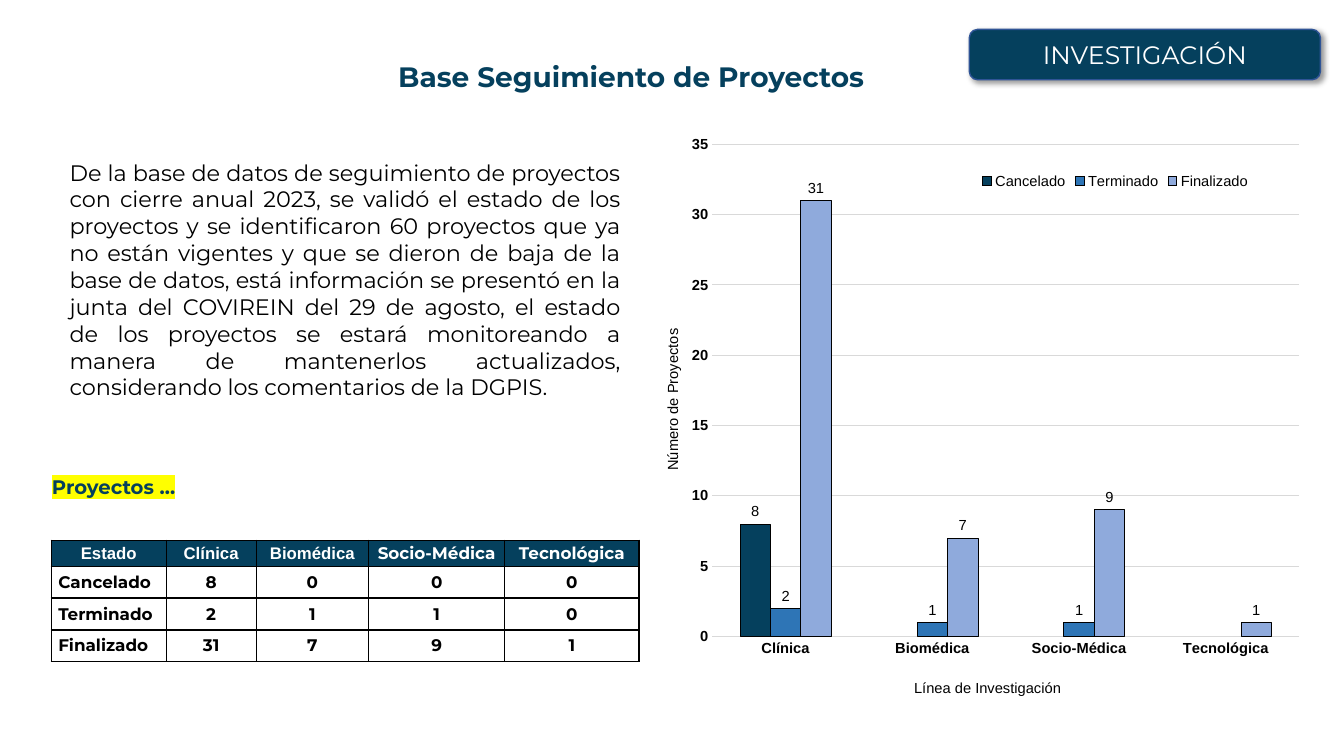
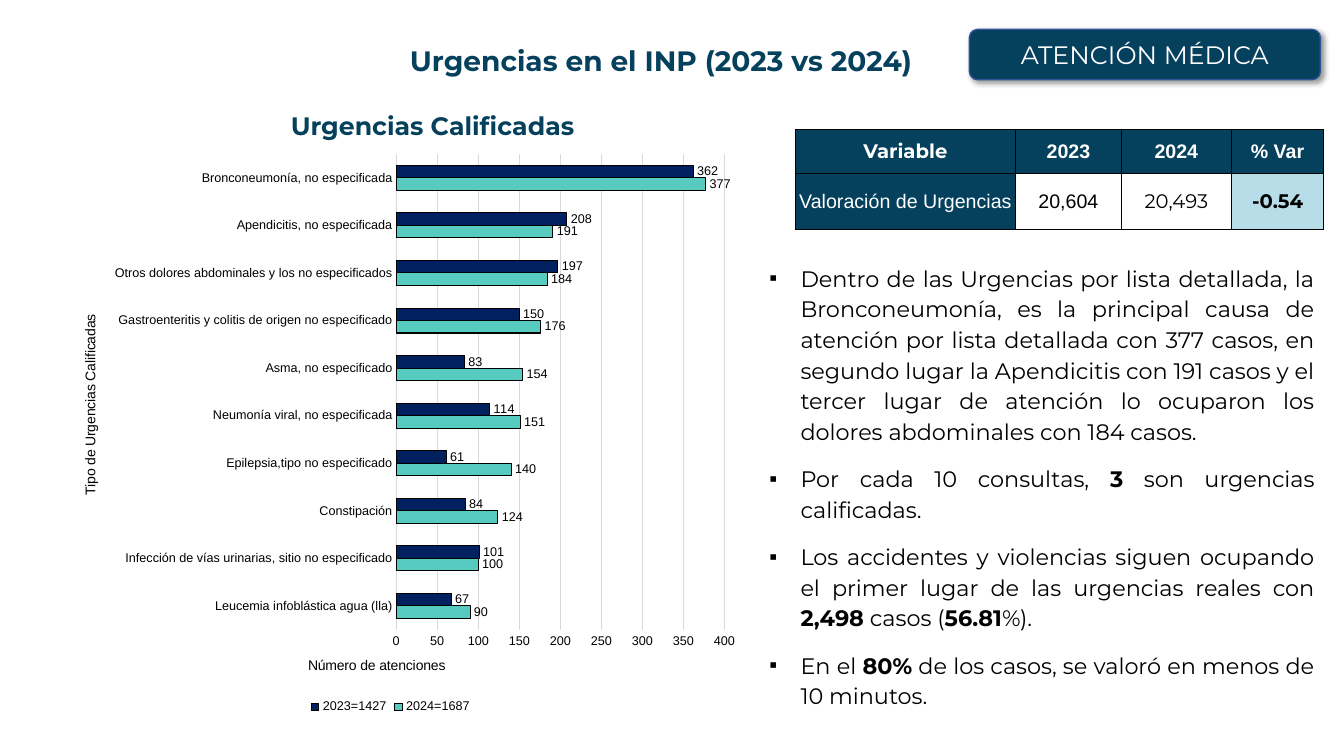
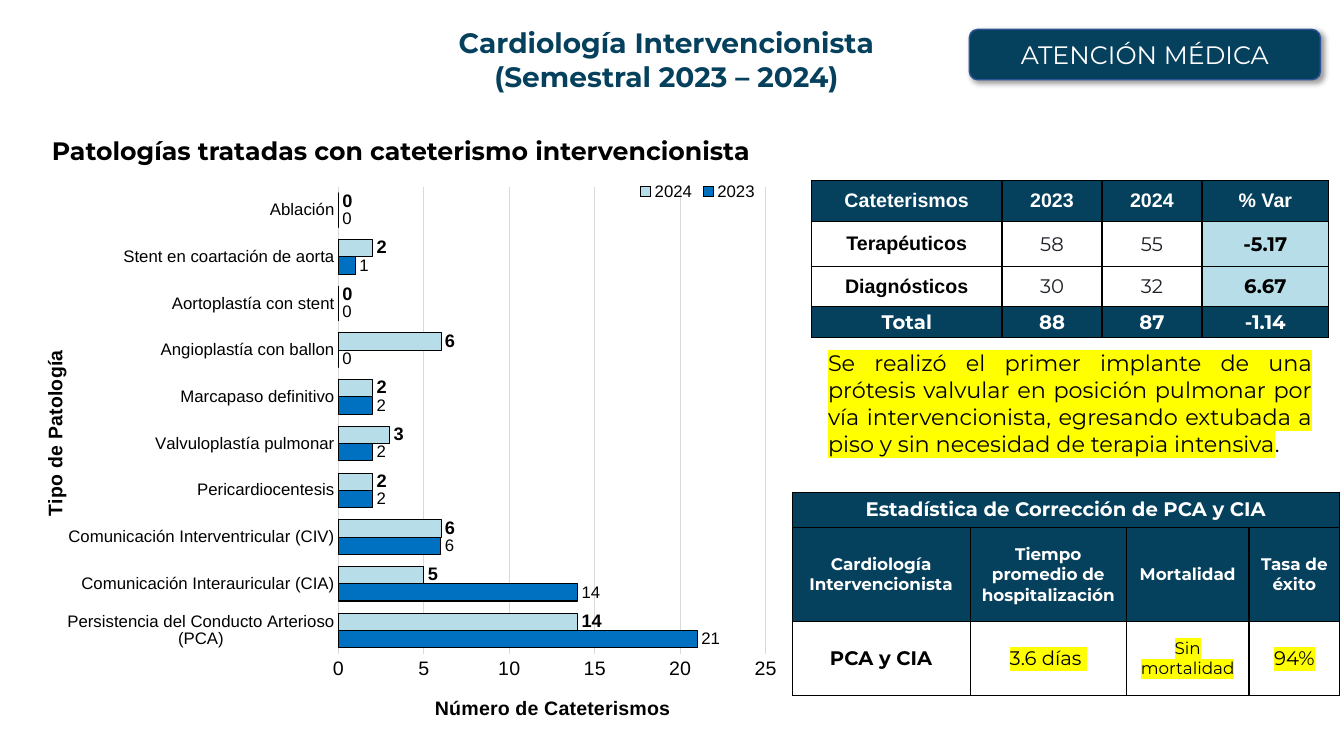
from lxml import etree
from pptx import Presentation
from pptx.chart.data import CategoryChartData
from pptx.dml.color import RGBColor
from pptx.enum.chart import XL_CHART_TYPE, XL_LABEL_POSITION, XL_LEGEND_POSITION, XL_TICK_MARK
from pptx.enum.shapes import MSO_SHAPE
from pptx.enum.text import MSO_ANCHOR, PP_ALIGN
from pptx.oxml.ns import qn
from pptx.util import Inches, Pt

COLUMNS = XL_CHART_TYPE.COLUMN_CLUSTERED
BARS = XL_CHART_TYPE.BAR_CLUSTERED
OUTSIDE = XL_LABEL_POSITION.OUTSIDE_END
BOTTOM = XL_LEGEND_POSITION.BOTTOM
NO_TICK = XL_TICK_MARK.NONE
ROUNDED = MSO_SHAPE.ROUNDED_RECTANGLE
LEFT, CENTER, JUSTIFY = PP_ALIGN.LEFT, PP_ALIGN.CENTER, PP_ALIGN.JUSTIFY
MIDDLE = MSO_ANCHOR.MIDDLE

NAVY, BLACK, WHITE, INK = "05405D", "000000", "FFFFFF", "1D2228"
PALE, YELLOW, GRID_LINE = "B7DEE8", "FFFF00", "D9D9D9"
SANS, BRAND = "Arial", "Montserrat"


def rgb(value):
    return RGBColor.from_string(value)


def grid(cells):
    return Inches(cells / 12)


def sub(parent, tag, **attrs):
    return etree.SubElement(parent, qn(tag), {k: str(v) for k, v in attrs.items()})


def set_font(font, size, color=BLACK, bold=False, name=SANS):
    font.size, font.bold, font.name = Pt(size), bold, name
    font.color.rgb = rgb(color)


def set_layout(parent, index, x, y, w=None, h=None):
    old = parent.find(qn("c:layout"))
    if old is not None:
        parent.remove(old)
    layout = etree.Element(qn("c:layout"))
    manual = sub(layout, "c:manualLayout")
    if w:
        sub(manual, "c:layoutTarget", val="inner")
    sub(manual, "c:xMode", val="edge")
    sub(manual, "c:yMode", val="edge")
    for tag, share in zip("xywh", (x, y, w, h)):
        if share is not None:
            sub(manual, "c:" + tag, val=share)
    parent.insert(index, layout)


class Deck:
    def __init__(self):
        self.prs = Presentation()
        self.prs.slide_width, self.prs.slide_height = grid(160), grid(90)

    def slide(self, section, title, at):
        self.s = self.prs.slides.add_slide(self.prs.slide_layouts[6])
        self.badge(section)
        self.text(at, title, size=20, color=NAVY, bold=True, align=CENTER)

    def badge(self, section):
        sp = self.s.shapes.add_shape(ROUNDED, *map(grid, (115.4, 3.5, 41.8, 6)))
        sp.fill.solid()
        sp.fill.fore_color.rgb = rgb(NAVY)
        sp.line.color.rgb = rgb("2F5496")
        sp.line.width = Pt(1)
        sp.shadow.inherit = False
        effects = sp._element.spPr.find(qn("a:effectLst"))
        shadow = sub(effects, "a:outerShdw", blurRad=Pt(4), dist=Pt(3), dir=45 * 60000,
                     algn="tl", rotWithShape=0)
        sub(sub(shadow, "a:srgbClr", val=BLACK), "a:alpha", val=40000)
        sp.text_frame.vertical_anchor = MIDDLE
        self.paragraphs(sp.text_frame, [section], size=18, color=WHITE, align=CENTER)

    def paragraphs(self, tf, lines, size=16, color=BLACK, bold=False, name=BRAND, align=LEFT,
                   spacing=None, bullet=None, before=0, highlight=None):
        for i, line in enumerate(lines):
            p = tf.paragraphs[0] if i == 0 else tf.add_paragraph()
            p.alignment = align
            if spacing:
                p.line_spacing = spacing
            if before and i:
                p.space_before = Pt(before)
            if bullet:
                pPr = p._p.get_or_add_pPr()
                pPr.set("marL", str(Inches(0.31)))
                pPr.set("indent", str(-Inches(0.31)))
                sub(sub(pPr, "a:buClr"), "a:srgbClr", val=color)
                sub(pPr, "a:buFont", typeface=SANS)
                sub(pPr, "a:buChar", char=bullet)
            set_font(p.font, size, color, bold, name)
            for j, part in enumerate(line.split("*")):
                if part:
                    r = p.add_run()
                    r.text = part
                    if j % 2 and highlight:
                        mark = sub(r._r.get_or_add_rPr(), "a:highlight")
                        sub(mark, "a:srgbClr", val=highlight)
                    elif j % 2:
                        r.font.bold = True

    def text(self, at, lines, **style):
        tf = self.s.shapes.add_textbox(*map(grid, at)).text_frame
        tf.word_wrap = True
        self.paragraphs(tf, lines, **style)

    def table(self, at, cols, rows, content):
        frame = self.s.shapes.add_table(len(rows), len(cols), *map(grid, (*at, sum(cols), sum(rows))))
        tb = frame.table
        tb.first_row = tb.horz_banding = False
        for col, width in zip(tb.columns, cols):
            col.width = grid(width)
        for i, (height, (texts, styles)) in enumerate(zip(rows, content)):
            tb.rows[i].height = grid(height)
            for j in range(len(cols)):
                text = texts[j] if j < len(texts) else ""
                self.cell(tb.cell(i, j), text, **styles[min(j, len(styles) - 1)])
            if len(texts) < len(cols):
                tb.cell(i, len(texts) - 1).merge(tb.cell(i, len(cols) - 1))

    def cell(self, cell, text, fill=WHITE, pad=(0.01, 0), align=CENTER, **style):
        tcPr = cell._tc.get_or_add_tcPr()
        for side in "LRTB":
            border = sub(tcPr, "a:ln" + side, w=Pt(1))
            sub(sub(border, "a:solidFill"), "a:srgbClr", val=BLACK)
        cell.fill.solid()
        cell.fill.fore_color.rgb = rgb(fill)
        cell.margin_left = cell.margin_right = Inches(pad[0])
        cell.margin_top = cell.margin_bottom = Inches(pad[1])
        cell.vertical_anchor = MIDDLE
        self.paragraphs(cell.text_frame, [text], align=align, **style)

    def chart(self, at, kind, cats, series, plot, gap, size, cat, val, top, step,
              legend_size, legend_at=None):
        data = CategoryChartData()
        data.categories = cats
        for name, values, *_ in series:
            data.add_series(name, values)
        chart = self.s.shapes.add_chart(kind, *map(grid, at), data).chart
        set_font(chart.font, size)
        chart.has_title = False
        chart.has_legend = True
        chart.legend.position = BOTTOM
        chart.legend.include_in_layout = False
        set_font(chart.legend.font, legend_size)
        if legend_at:
            set_layout(chart.legend._element, 1, *legend_at)
        set_layout(chart._chartSpace.chart.plotArea, 0, *plot)
        bars = chart.plots[0]
        bars.gap_width, bars.overlap, bars.vary_by_categories = gap, 0, False
        for ser, (_, _, color, line, font) in zip(bars.series, series):
            ser.format.fill.solid()
            ser.format.fill.fore_color.rgb = rgb(color)
            ser.format.line.color.rgb = rgb(BLACK)
            ser.format.line.width = Pt(line)
            labels = ser.data_labels
            labels.show_value = True
            labels.position = OUTSIDE
            set_font(labels.font, **font)
        self.axis(chart.category_axis, upright=kind == BARS, **cat)
        self.axis(chart.value_axis, upright=kind == COLUMNS, **val)
        chart.category_axis.has_major_gridlines = False
        self.hairline(chart.category_axis.format.line)
        value = chart.value_axis
        value.minimum_scale, value.maximum_scale, value.major_unit = 0, top, step
        value.format.line.fill.background()
        self.hairline(value.major_gridlines.format.line)

    def hairline(self, line):
        line.color.rgb = rgb(GRID_LINE)
        line.width = Pt(0.75)

    def axis(self, axis, upright, title, at, font, title_font):
        axis.major_tick_mark = axis.minor_tick_mark = NO_TICK
        set_font(axis.tick_labels.font, **font)
        tf = axis.axis_title.text_frame
        tf.text = title
        set_font(tf.paragraphs[0].font, **title_font)
        if upright:
            body = tf._txBody.find(qn("a:bodyPr"))
            body.set("rot", "-5400000")
            body.set("vert", "horz")
        set_layout(axis.axis_title._element, 1, *at)


def projects(deck):
    deck.slide("INVESTIGACIÓN", ["Base Seguimiento de Proyectos"], (45.4, 6.5, 59.5, 5.3))
    deck.text((7.1, 18.3, 68, 36.7), [
        "De la base de datos de seguimiento de proyectos con cierre anual 2023, se validó el estado "
        "de los proyectos y se identificaron 60 proyectos que ya no están vigentes y que se dieron "
        "de baja de la base de datos, está información se presentó en la junta del COVIREIN del 29 "
        "de agosto, el estado de los proyectos se estará monitoreando a manera de mantenerlos "
        "actualizados, considerando los comentarios de la DGPIS."], align=JUSTIFY)
    deck.text((5, 55.9, 59.5, 4.1), ["*Proyectos …*"], size=14, color=NAVY, bold=True,
              highlight=YELLOW)
    cats = ["Clínica", "Biomédica", "Socio-Médica", "Tecnológica"]
    counts = {"Cancelado": [8, 0, 0, 0], "Terminado": [2, 1, 1, 0], "Finalizado": [31, 7, 9, 1]}
    base = dict(size=12, bold=True, pad=(0.07, 0))
    head = dict(base, fill=NAVY, color=WHITE, spacing=1.07)
    arial = dict(head, name=SANS)
    deck.table((6.1, 64.3), (13.7, 10.7, 13.4, 16.2, 16), (3.1, 3.8, 3.8, 3.8),
               [(["Estado", *cats], [arial, arial, arial, head])]
               + [([name, *map(str, row)], [dict(base, align=LEFT), dict(base, pad=(0.01, 0))])
                  for name, row in counts.items()])
    plain = dict(size=10.5)
    strong = dict(size=10.5, bold=True)
    deck.chart((76.2, 16.1, 78.8, 67.4), COLUMNS, cats,
               [(name, [n or None for n in row], color, 0.5, plain)
                for (name, row), color in zip(counts.items(), (NAVY, "2E75B6", "8FAADC"))],
               (0.109, 0.016, 0.887, 0.874), 182, 10.5,
               dict(title="Línea de Investigación", at=(0.41, 0.96), font=strong, title_font=plain),
               dict(title="Número de Proyectos", at=(0.03, 0.34), font=strong, title_font=plain),
               35, 5, 10.5, (0.51, 0.06))


def emergencies(deck):
    deck.slide("ATENCIÓN MÉDICA", ["Urgencias en el INP (2023 vs 2024)"], (41.9, 4.6, 73.6, 5.8))
    small, label = dict(size=9), dict(size=10)
    deck.chart((4.3, 15.4, 84.4, 70.1), BARS,
               ["Leucemia infoblástica agua (lla)",
                "Infección de vías urinarias, sitio no especificado", "Constipación",
                "Epilepsia,tipo no especificado", "Neumonía viral, no especificada",
                "Asma, no especificado", "Gastroenteritis y colitis de origen no especificado",
                "Otros dolores abdominales y los no especificados", "Apendicitis, no especificada",
                "Bronconeumonía, no especificada"],
               [("2024=1687", [90, 100, 124, 140, 151, 154, 176, 184, 191, 377], "58CBC0", 0.75, small),
                ("2023=1427", [67, 101, 84, 61, 114, 83, 150, 197, 208, 362], "002060", 0.75, small)],
               (0.508, 0.042, 0.463, 0.808), 182, 10,
               dict(title="Tipo de Urgencias Calificadas", at=(0.06, 0.31), font=small, title_font=label),
               dict(title="Número de atenciones", at=(0.38, 0.89), font=small, title_font=label),
               400, 50, 9)
    deck.text((28, 12.5, 47, 4.8), ["Urgencias Calificadas"], size=18, color=NAVY, bold=True,
              align=CENTER)
    body = dict(size=14)
    head = dict(body, fill=NAVY, color=WHITE, bold=True)
    deck.table((94.7, 15.4), (26.2, 12.6, 13.1, 11), (5.3, 6.6), [
        (["Variable", "2023", "2024", "% Var"], [head, dict(head, name=SANS)]),
        (["Valoración de Urgencias", "20,604", "20,493", "-0.54"],
         [dict(head, name=SANS, bold=False), dict(body, name=SANS), body,
          dict(body, fill=PALE, bold=True)])])
    deck.text((90.4, 30.5, 67.3, 55), [
        "Dentro de las Urgencias por lista detallada, la Bronconeumonía, es la principal causa de "
        "atención por lista detallada con 377 casos, en segundo lugar la Apendicitis con 191 casos "
        "y el tercer lugar de atención lo ocuparon los dolores abdominales con 184 casos.",
        "Por cada 10 consultas, *3* son urgencias calificadas.",
        "Los accidentes y violencias siguen ocupando el primer lugar de las urgencias reales con "
        "*2,498* casos (*56.81*%).",
        "En el *80%* de los casos, se valoró en menos de 10 minutos."],
        align=JUSTIFY, spacing=1.14, bullet="▪", before=12)


def cardiology(deck):
    deck.slide("ATENCIÓN MÉDICA", ["Cardiología Intervencionista", "(Semestral 2023 – 2024)"],
               (50.9, 2.5, 56.9, 11.4))
    deck.text((5, 15.5, 95.9, 4.8), ["Patologías tratadas con cateterismo intervencionista"],
              size=18, bold=True)
    label, strong = dict(size=12), dict(size=14, bold=True)
    deck.chart((3.7, 18.6, 89.9, 67.8), BARS,
               ["Persistencia del Conducto Arterioso (PCA)", "Comunicación Interauricular (CIA)",
                "Comunicación Interventricular (CIV)", "Pericardiocentesis",
                "Valvuloplastía pulmonar", "Marcapaso definitivo", "Angioplastía con ballon",
                "Aortoplastía con stent", "Stent en coartación de aorta", "Ablación"],
               [("2023", [21, 14, 6, 2, 2, 2, 0, 0, 1, 0], "0070C0", 0.75, label),
                ("2024", [14, 5, 6, 2, 3, 2, 6, 0, 2, 0], PALE, 0.5, dict(size=13, bold=True))],
               (0.407, 0.054, 0.566, 0.828), 70, 10.5,
               dict(title="Tipo de Patología", at=(0.01, 0.34), font=label, title_font=strong),
               dict(title="Número de Cateterismos", at=(0.53, 0.95), font=dict(size=14),
                    title_font=strong),
               25, 5, 12, (0.8, 0.04))
    body = dict(size=14)
    head = dict(body, fill=NAVY, color=WHITE, bold=True)
    kind = dict(body, name=SANS, bold=True)
    count = dict(body, color=INK)
    change = dict(body, fill=PALE, bold=True)
    deck.table((96.6, 21.5), (22.7, 11.9, 11.9, 15.1), (4.9, 5.3, 4.8, 3.7), [
        (["Cateterismos", "2023", "2024", "% Var"], [dict(head, name=SANS)]),
        (["Terapéuticos", "58", "55", "-5.17"], [kind, count, count, change]),
        (["Diagnósticos", "30", "32", "6.67"], [kind, count, count, change]),
        (["Total", "88", "87", "-1.14"], [head])])
    deck.text((97.4, 41, 60, 14.2), [
        "*Se realizó el primer implante de una prótesis valvular en posición pulmonar por vía "
        "intervencionista, egresando extubada a piso y sin necesidad de terapia intensiva*."],
        align=JUSTIFY, highlight=YELLOW)
    padded_head = dict(head, pad=(0.1, 0.05))
    padded = dict(body, pad=(0.1, 0.05))
    marked = dict(padded, highlight=YELLOW)
    deck.table((94.3, 58.6), (21.2, 18.6, 14.6, 10.8), (4.2, 11.2, 8.8), [
        (["Estadística de Corrección de PCA y CIA"], [padded_head]),
        (["Cardiología Intervencionista", "Tiempo promedio de hospitalización", "Mortalidad",
          "Tasa de éxito"], [dict(padded_head, size=12)]),
        (["PCA y CIA", "*3.6 días *", "*Sin mortalidad*", "*94%*"],
         [dict(padded, bold=True), marked, dict(marked, size=12), marked])])


def main():
    deck = Deck()
    for build in (projects, emergencies, cardiology):
        build(deck)
    deck.prs.save("out.pptx")


if __name__ == "__main__":
    main()
